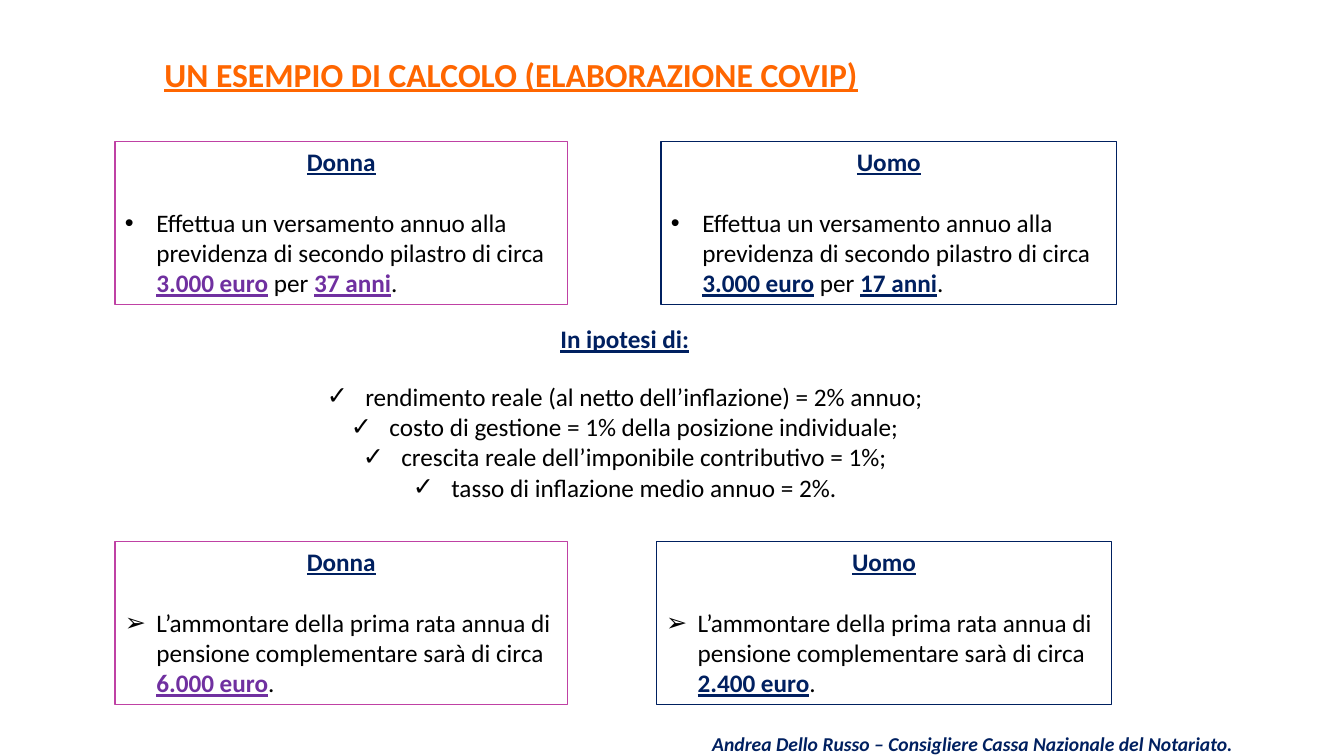
"""Build the slide comparing a woman's and a man's pension example."""
import pptx
import pptx.util
import pptx.dml.color
import pptx.enum.shapes
import pptx.enum.text
from lxml import etree

Cm, Pt = pptx.util.Cm, pptx.util.Pt
RGB = pptx.dml.color.RGBColor
ALIGN = pptx.enum.text.PP_ALIGN
ORANGE = RGB(0xFF, 0x66, 0x00)
NAVY = RGB(0x00, 0x20, 0x60)
PURPLE = RGB(0x70, 0x30, 0xA0)
PINK = RGB(0xBF, 0x41, 0xA4)
BLACK = RGB(0x00, 0x00, 0x00)

TITLE = "UN ESEMPIO DI CALCOLO (ELABORAZIONE COVIP)"
AUTHOR = "Andrea Dello Russo – Consigliere Cassa Nazionale del Notariato."
PAY = "Effettua un versamento annuo alla previdenza di secondo pilastro di circa "
RENT = "L’ammontare della prima rata annua di pensione complementare sarà di circa "
HEAD = "In ipotesi di:"
TERMS = [
    "rendimento reale (al netto dell’inflazione) = 2% annuo;",
    "costo di gestione = 1% della posizione individuale;",
    "crescita reale dell’imponibile contributivo = 1%;",
    "tasso di inflazione medio annuo = 2%.",
]
WOMAN = ("Donna", 11.4, PINK, PURPLE)
MAN = ("Uomo", 11.48, NAVY, NAVY)
TOP, LOW, HIGH = 3.56, 13.64, 4.11
CARDS = [
    (WOMAN, 2.9, TOP, "•", [PAY, "3.000 euro", " per ", "37 anni", "."]),
    (MAN, 16.66, TOP, "•", [PAY, "3.000 euro", " per ", "17 anni", "."]),
    (WOMAN, 2.9, LOW, "➢", [RENT, "6.000 euro", "."]),
    (MAN, 16.54, LOW, "➢", [RENT, "2.400 euro", "."]),
]


def add_run(para, text, color=BLACK, size=18, bold=False, under=False, slant=False):
    """Append one formatted run to a paragraph."""
    run = para.add_run()
    run.text = text
    font = run.font
    font.name, font.size = "Calibri", Pt(size)
    font.bold, font.underline, font.italic = bold, under, slant
    font.color.rgb = color


def add_mark(para, sign, gap):
    """Give a paragraph a hanging bullet."""
    props = para._p.get_or_add_pPr()
    props.set("marL", str(Cm(gap)))
    props.set("indent", str(-Cm(gap)))
    face = etree.SubElement(props, pptx.oxml.ns.qn("a:buFont"))
    face.set("typeface", "Arial")
    etree.SubElement(props, pptx.oxml.ns.qn("a:buChar")).set("char", sign)


def set_frame(shape):
    """Wrap the text from the top and fit the shape to it."""
    frame = shape.text_frame
    frame.word_wrap = True
    frame.auto_size = pptx.enum.text.MSO_AUTO_SIZE.SHAPE_TO_FIT_TEXT
    frame.vertical_anchor = pptx.enum.text.MSO_ANCHOR.TOP
    return frame


def add_head(frame, text):
    """Write a centred underlined heading."""
    para = frame.paragraphs[0]
    para.alignment = ALIGN.CENTER
    add_run(para, text, NAVY, bold=True, under=True)


def add_card(slide, who, left, top, sign, parts):
    """Draw one outlined card whose odd parts are stressed."""
    name, wide, edge, tint = who
    box = slide.shapes.add_shape(
        pptx.enum.shapes.MSO_SHAPE.RECTANGLE, Cm(left), Cm(top), Cm(wide), Cm(HIGH))
    box.shadow.inherit = False
    box.fill.background()
    box.line.color.rgb = edge
    box.line.width = Pt(1)
    frame = set_frame(box)
    add_head(frame, name)
    para = frame.add_paragraph()
    para.alignment = ALIGN.LEFT
    para.space_before = Pt(22)
    add_mark(para, sign, 0.79)
    for rank, part in enumerate(parts):
        key = rank % 2 == 1
        add_run(para, part, tint if key else BLACK, bold=key, under=key)


def add_terms(slide):
    """Write the centred list of assumptions."""
    box = slide.shapes.add_textbox(Cm(6.12), Cm(8.03), Cm(19.25), Cm(4.78))
    frame = set_frame(box)
    add_head(frame, HEAD)
    for rank, term in enumerate(TERMS):
        para = frame.add_paragraph()
        para.alignment = ALIGN.CENTER
        para.space_before = Pt(0 if rank else 19.5)
        add_mark(para, "✓", 0.97)
        add_run(para, term)


def main():
    """Assemble and save the slide."""
    deck = pptx.Presentation()
    deck.slide_width, deck.slide_height = Cm(33.87), Cm(19.05)
    slide = deck.slides.add_slide(deck.slide_layouts[5])
    title = slide.shapes.title
    title.left, title.top, title.width, title.height = Cm(2.57), Cm(1.22), Cm(20.42), Cm(1.27)
    para = set_frame(title).paragraphs[0]
    para.alignment = ALIGN.LEFT
    para._p.get_or_add_pPr().set("marL", str(Cm(1.32)))
    add_run(para, TITLE, ORANGE, 24, bold=True, under=True)
    foot = slide.shapes.add_textbox(Cm(17.7), Cm(18.31), Cm(16.48), Cm(1.45))
    add_run(set_frame(foot).paragraphs[0], AUTHOR, NAVY, 14, bold=True, slant=True)
    for card in CARDS:
        add_card(slide, *card)
    add_terms(slide)
    deck.save("out.pptx")


if __name__ == "__main__":
    main()
